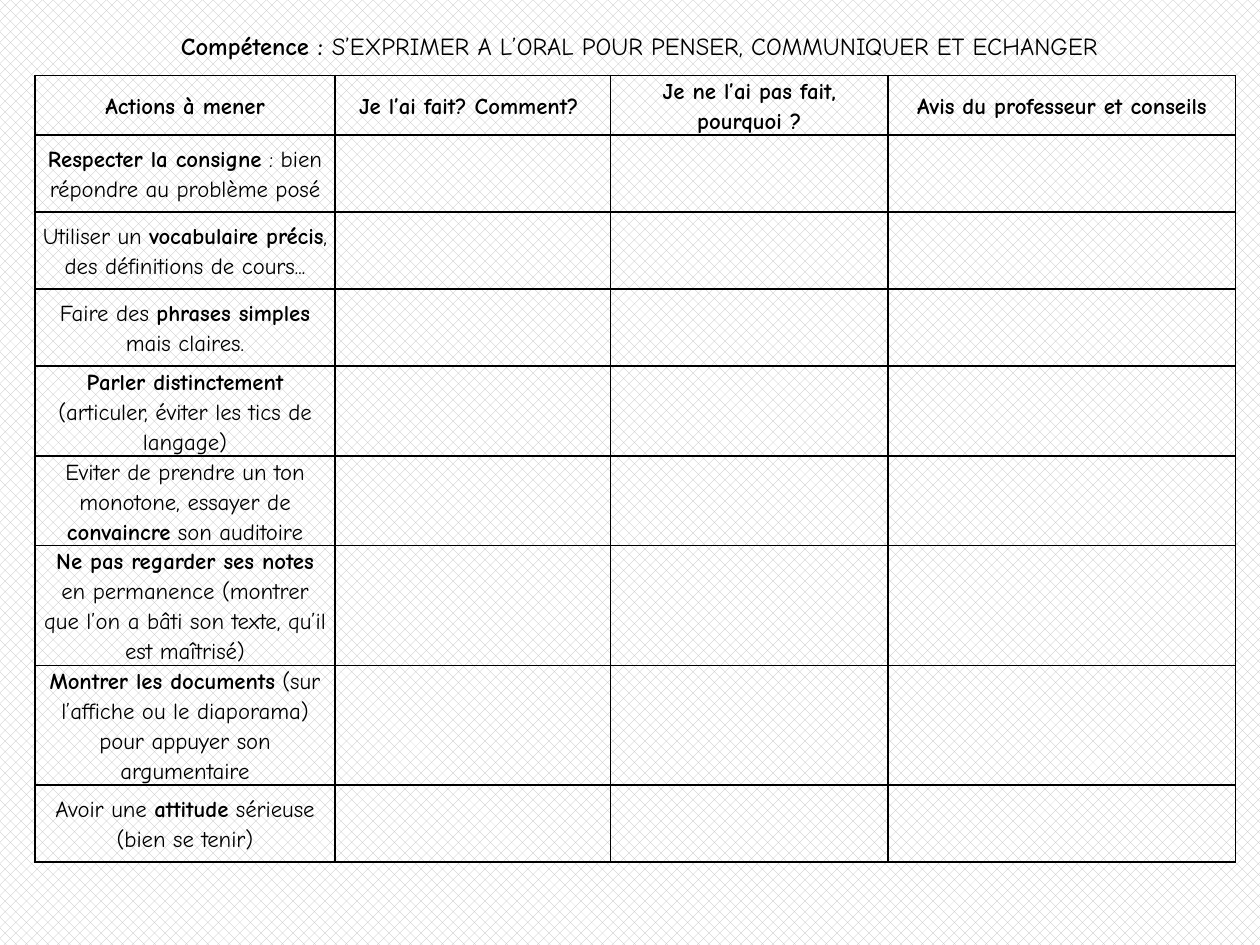
"""Build a self-assessment grid for oral expression."""
import dataclasses

import pptx
import pptx.dml.color
import pptx.enum.dml
import pptx.enum.text
import pptx.oxml
import pptx.oxml.ns
import pptx.util

Pt = pptx.util.Pt
FONT = "Comic Neue"
BLACK = "000000"


@dataclasses.dataclass
class Run:
    text: str
    bold: bool = False


@dataclasses.dataclass
class Row:
    height: float
    cells: list[list[Run]]


COL_WIDTHS = [171.5, 157.5, 158.5, 198.7]
TITLE = [
    Run("Compétence : ", True),
    Run("S’EXPRIMER A L’ORAL POUR PENSER, COMMUNIQUER ET ECHANGER"),
]
HEADERS = [
    "Actions à mener",
    "Je l’ai fait? Comment? ",
    "Je ne l’ai pas fait, pourquoi ?",
    "Avis du professeur et conseils",
]
ROWS = [
    Row(32.4, [[Run(text, True)] for text in HEADERS]),
    Row(44, [[Run("Respecter la consigne", True),
              Run(" : bien répondre au problème posé")]]),
    Row(44, [[Run("Utiliser un "), Run("vocabulaire précis", True),
              Run(", des définitions de cours...")]]),
    Row(44, [[Run("Faire des "), Run("phrases simples ", True),
              Run("mais claires.")]]),
    Row(44, [[Run("Parler distinctement", True),
              Run(" (articuler, éviter les tics de langage)")]]),
    Row(44, [[Run("Eviter de prendre un ton monotone, essayer de "),
              Run("convaincre", True), Run(" son auditoire")]]),
    Row(48, [[Run("Ne pas regarder ses notes", True),
              Run(" en permanence (montrer que l’on a bâti son texte, "
                  "qu’il est maîtrisé)")]]),
    Row(48, [[Run("Montrer les documents", True),
              Run(" (sur l’affiche ou le diaporama) pour appuyer son "
                  "argumentaire")]]),
    Row(44, [[Run("Avoir une "), Run("attitude", True),
              Run(" sérieuse (bien se tenir)")]]),
]


def rgb(value: str) -> pptx.dml.color.RGBColor:
    return pptx.dml.color.RGBColor.from_string(value)


def add_runs(tf, runs: list[Run], size: float, spacing: float = 1) -> None:
    p = tf.paragraphs[0]
    p.alignment = pptx.enum.text.PP_ALIGN.CENTER
    p.line_spacing = spacing
    for run in runs:
        r = p.add_run()
        r.text = run.text
        r.font.name = FONT
        r.font.size = Pt(size)
        r.font.bold = run.bold
        r.font.color.rgb = rgb(BLACK)


def set_borders(cell, color: str, width: float) -> None:
    tc_pr = cell._tc.get_or_add_tcPr()
    for i, side in enumerate(("lnL", "lnR", "lnT", "lnB")):
        tc_pr.insert(i, pptx.oxml.parse_xml(
            f'<a:{side} {pptx.oxml.ns.nsdecls("a")} w="{Pt(width)}">'
            f'<a:solidFill><a:srgbClr val="{color}"/></a:solidFill></a:{side}>'))


def add_title(s) -> None:
    sp = s.shapes.add_textbox(Pt(31), Pt(13.7), Pt(669), Pt(24.5))
    tf = sp.text_frame
    tf.word_wrap = True
    tf.auto_size = pptx.enum.text.MSO_AUTO_SIZE.SHAPE_TO_FIT_TEXT
    tf.vertical_anchor = pptx.enum.text.MSO_ANCHOR.MIDDLE
    add_runs(tf, TITLE, 14)


def add_grid(s) -> None:
    table = s.shapes.add_table(
        len(ROWS), len(COL_WIDTHS), Pt(19.9), Pt(43), Pt(sum(COL_WIDTHS)),
        Pt(sum(row.height for row in ROWS))).table
    table.first_row = table.horz_banding = False
    for column, width in zip(table.columns, COL_WIDTHS):
        column.width = Pt(width)
    for i, row in enumerate(ROWS):
        table.rows[i].height = Pt(row.height)
        for cell in table.rows[i].cells:
            cell.fill.background()
            cell.vertical_anchor = pptx.enum.text.MSO_ANCHOR.MIDDLE
            cell.margin_left = cell.margin_right = Pt(3.6)
            cell.margin_top = cell.margin_bottom = 0
            set_borders(cell, BLACK, 1)
        for j, runs in enumerate(row.cells):
            add_runs(table.cell(i, j).text_frame, runs, 13, 1.15)


def main() -> None:
    prs = pptx.Presentation()
    prs.slide_width, prs.slide_height = Pt(720), Pt(540)
    s = prs.slides.add_slide(prs.slide_layouts[6])
    fill = s.background.fill
    fill.patterned()
    fill.pattern = pptx.enum.dml.MSO_PATTERN.from_xml("pct40")
    fill.fore_color.rgb = rgb("BFBFBF")
    fill.back_color.rgb = rgb("FFFFFF")
    add_grid(s)
    add_title(s)
    prs.save("out.pptx")


if __name__ == "__main__":
    main()
